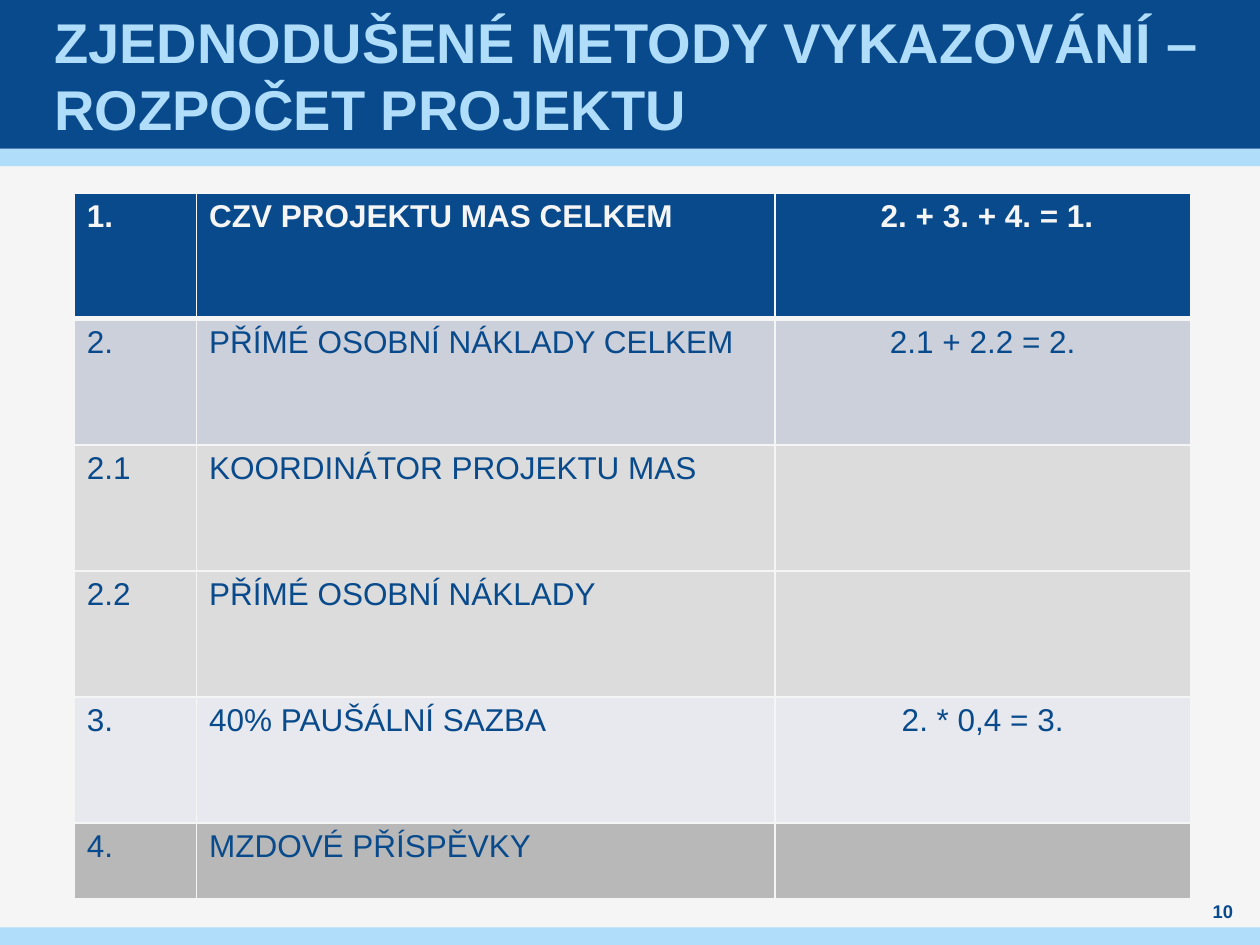
from dataclasses import dataclass

from lxml import etree
from pptx import Presentation
from pptx.dml.color import RGBColor
from pptx.enum import shapes, text
from pptx.oxml.ns import qn
from pptx.util import Inches, Pt

COLORS = {
    "navy": "084A8B",
    "sky": "AFDDFA",
    "paper": "F5F5F5",
    "subtotal": "CCD0DA",
    "detail": "DCDCDC",
    "rate": "E7E9EE",
    "wages": "B8B8B8",
}
FONT = "Arial"
COL_WIDTHS = (0.97, 4.59, 3.3)
ROW_HEIGHT, LAST_ROW_HEIGHT = 1, 0.6


@dataclass
class Band:
    top: float
    height: float
    color: str


@dataclass
class BudgetRow:
    number: str
    item: str
    formula: str
    fill: str


BANDS = [Band(1.18, 0.14, "sky"), Band(0, 1.18, "navy"), Band(7.36, 0.14, "sky")]
ROWS = [
    BudgetRow("1.", "CZV PROJEKTU MAS CELKEM", " 2. + 3. + 4. = 1.", "navy"),
    BudgetRow("2.", "PŘÍMÉ OSOBNÍ NÁKLADY CELKEM", "2.1 + 2.2 = 2.", "subtotal"),
    BudgetRow("2.1", "KOORDINÁTOR PROJEKTU MAS", "", "detail"),
    BudgetRow("2.2", "PŘÍMÉ OSOBNÍ NÁKLADY", "", "detail"),
    BudgetRow("3.", "40% PAUŠÁLNÍ SAZBA", "2. * 0,4 = 3.", "rate"),
    BudgetRow("4.", "MZDOVÉ PŘÍSPĚVKY", "", "wages"),
]


def rgb(name: str) -> RGBColor:
    return RGBColor.from_string(COLORS[name])


def add_run(p, content: str, size: float, color: str, bold: bool) -> None:
    r = p.add_run()
    r.text = content
    r.font.name = FONT
    r.font.size = Pt(size)
    r.font.bold = bold
    r.font.color.rgb = rgb(color)


def set_frame(tf, side: float) -> None:
    """Wrap and centre vertically, with the given side margins only."""
    tf.word_wrap = True
    tf.auto_size = text.MSO_AUTO_SIZE.NONE
    tf.vertical_anchor = text.MSO_ANCHOR.MIDDLE
    tf.margin_left = tf.margin_right = Inches(side)
    tf.margin_top = tf.margin_bottom = 0


def add_band(slide, band: Band) -> None:
    sp = slide.shapes.add_shape(shapes.MSO_SHAPE.RECTANGLE, 0, Inches(band.top),
                                Inches(10), Inches(band.height))
    sp.shadow.inherit = False
    sp.fill.solid()
    sp.fill.fore_color.rgb = rgb(band.color)
    sp.line.fill.background()


def set_borders(cell, top: float, bottom: float) -> None:
    tc_pr = cell._tc.get_or_add_tcPr()
    widths = {"lnL": 1, "lnR": 1, "lnT": top, "lnB": bottom}
    for i, (tag, width) in enumerate(widths.items()):
        ln = etree.Element(qn(f"a:{tag}"), w=str(Pt(width)))
        fill = etree.SubElement(ln, qn("a:solidFill"))
        etree.SubElement(fill, qn("a:srgbClr"), val=COLORS["paper"])
        tc_pr.insert(i, ln)


def add_budget_table(slide) -> None:
    heights = [ROW_HEIGHT] * (len(ROWS) - 1) + [LAST_ROW_HEIGHT]
    table = slide.shapes.add_table(
        len(ROWS), len(COL_WIDTHS), Inches(0.59), Inches(1.53),
        Inches(sum(COL_WIDTHS)), Inches(sum(heights))).table
    for col, width in zip(table.columns, COL_WIDTHS):
        col.width = Inches(width)
    for i, (row, height) in enumerate(zip(ROWS, heights)):
        table.rows[i].height = Inches(height)
        header = i == 0
        for j, content in enumerate((row.number, row.item, row.formula)):
            cell = table.cell(i, j)
            cell.fill.solid()
            cell.fill.fore_color.rgb = rgb(row.fill)
            set_borders(cell, top=3 if i == 1 else 1, bottom=3 if header else 1)
            p = cell.text_frame.paragraphs[0]
            if j == 2:
                p.alignment = text.PP_ALIGN.CENTER
            if content:
                add_run(p, content, 18, "paper" if header else "navy", header)


def add_title(slide) -> None:
    sp = slide.shapes.title
    sp.left, sp.top, sp.width, sp.height = (Inches(v) for v in (0.39, 0, 9.21, 1.18))
    set_frame(sp.text_frame, 0.04)
    p = sp.text_frame.paragraphs[0]
    p.alignment = text.PP_ALIGN.LEFT
    add_run(p, "ZJEDNODUŠENÉ METODY VYKAZOVÁNÍ – ROZPOČET PROJEKTU", 32, "sky", True)
    slide.shapes._spTree.append(sp._element)  # in front of the bands


def add_page_number(slide) -> None:
    sp = slide.shapes.add_textbox(Inches(9.45), Inches(7.13), Inches(0.51), Inches(0.2))
    set_frame(sp.text_frame, 0)
    p = sp.text_frame.paragraphs[0]
    p.alignment = text.PP_ALIGN.CENTER
    add_run(p, "10", 10.5, "navy", True)


def main() -> None:
    prs = Presentation()
    prs.slide_width, prs.slide_height = Inches(10), Inches(7.5)
    slide = prs.slides.add_slide(prs.slide_layouts[5])
    slide.background.fill.solid()
    slide.background.fill.fore_color.rgb = rgb("paper")
    for band in BANDS:
        add_band(slide, band)
    add_title(slide)
    add_page_number(slide)
    add_budget_table(slide)
    prs.save("out.pptx")


if __name__ == "__main__":
    main()
